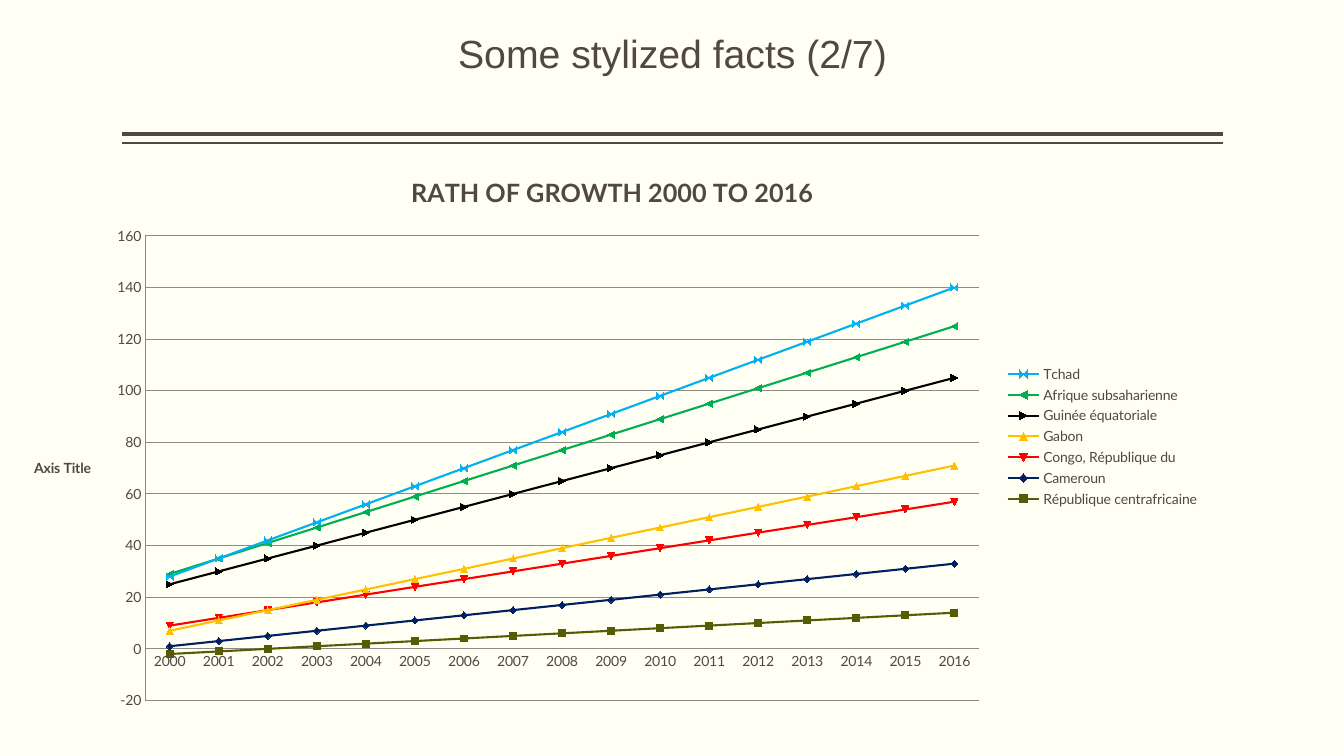
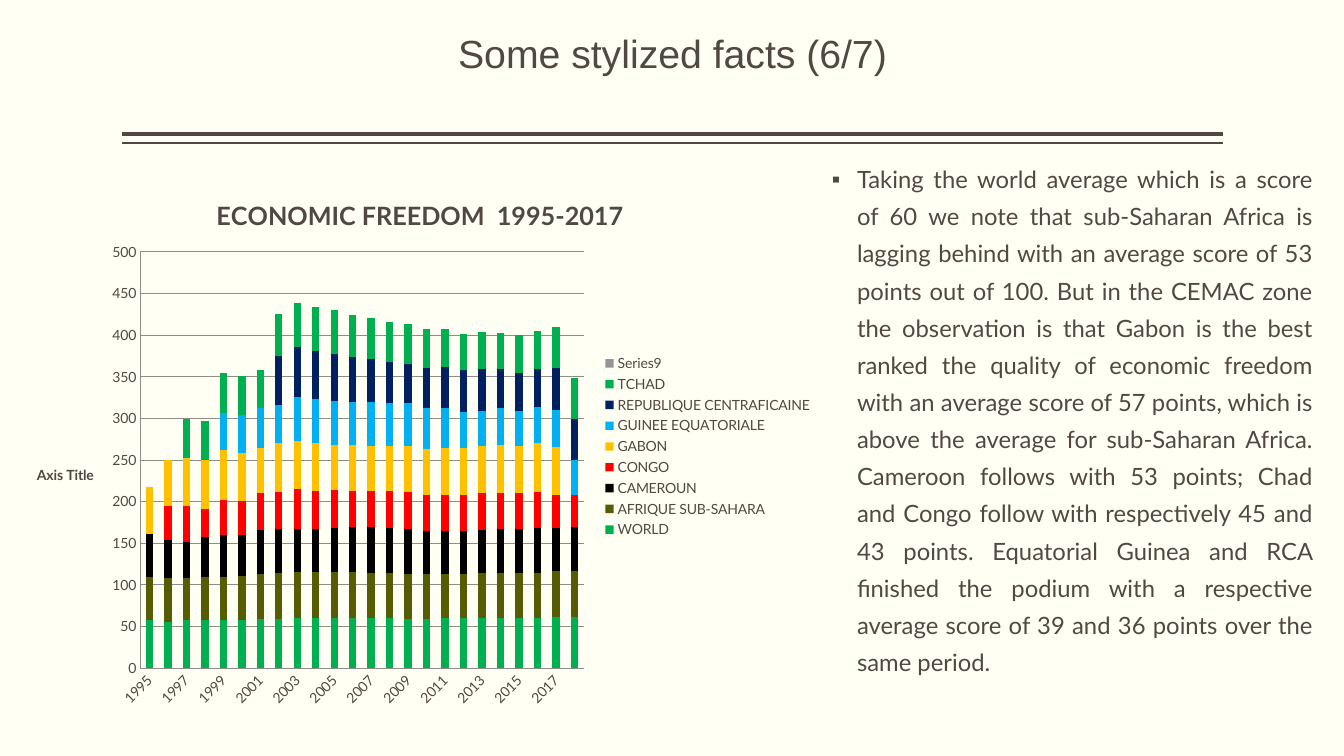
from lxml.etree import SubElement
from pptx import Presentation
from pptx.chart.data import CategoryChartData
from pptx.dml.color import RGBColor
from pptx.enum.chart import XL_CHART_TYPE, XL_LEGEND_POSITION, XL_TICK_MARK
from pptx.enum.shapes import MSO_CONNECTOR
from pptx.enum.text import MSO_ANCHOR, MSO_AUTO_SIZE, PP_ALIGN
from pptx.oxml import parse_xml
from pptx.oxml.ns import nsdecls, qn
from pptx.util import Inches, Pt

INK = "514843"
PAPER = "FFFFF3"
GRID = "8E8C86"
OLIVE, NAVY, RED, GOLD = "565C04", "002060", "FF0000", "FFC000"
BLACK, GREEN, SKY, GRAY = "000000", "00B050", "00B0F0", "939598"

TITLE_FONT = {"name": "Arial", "size": Pt(28), "bold": False}
BODY_FONT = {"name": "Lato", "size": Pt(17)}
CHART_FONT = {"name": "Lato", "size": Pt(10), "bold": False}
AXIS_TITLE_FONT = {"name": "Lato", "size": Pt(10), "bold": True}
CHART_TITLE_FONT = {"name": "Lato", "size": Pt(18), "bold": True}

TITLE_BOX = (1.21, 0.08, 10.92, 1.2)
RULES = ((1.33, 3), (1.42, 1))

GROWTH_YEARS = range(2000, 2017)
GROWTH_STARTS = (
    ("République centrafricaine", OLIVE, -2),
    ("Cameroun", NAVY, 3),
    ("Congo, République du", RED, 8),
    ("Gabon", GOLD, -2),
    ("Guinée équatoriale", BLACK, 18),
    ("Afrique subsaharienne", GREEN, 4),
    ("Tchad", SKY, -1),
)
GROWTH_SERIES = [
    (name, color, range(start, start + len(GROWTH_YEARS)))
    for name, color, start in GROWTH_STARTS
]

FREEDOM_YEARS = range(1995, 2019)
FREEDOM_SERIES = (
    ("WORLD", GREEN, [58, 56, 58, 58, 58, 58, 59, 59, 60, 60, 60, 60,
                      60, 60, 59, 59, 60, 60, 60, 60, 60, 60, 61, 61]),
    ("AFRIQUE SUB-SAHARA", OLIVE, [52, 52, 50, 51, 52, 53, 54, 55, 55, 55, 55, 55,
                                   54, 54, 54, 54, 53, 53, 54, 54, 54, 54, 56, 56]),
    ("CAMEROUN", BLACK, [51, 46, 44, 48, 50, 49, 53, 53, 52, 52, 53, 54,
                         55, 54, 54, 52, 52, 52, 52, 53, 53, 54, 51, 52]),
    ("CONGO", RED, [0, 41, 43, 34, 42, 41, 44, 45, 48, 46, 46, 44,
                    44, 45, 45, 43, 43, 43, 44, 43, 43, 44, 40, 39]),
    ("GABON", GOLD, [57, 55, 58, 59, 60, 58, 55, 58, 58, 58, 54, 55,
                     54, 54, 55, 55, 56, 56, 57, 58, 57, 58, 58, None]),
    ("GUINEE EQUATORIALE", SKY, [0, 0, 0, 0, 45, 45, 47, 46, 53, 52, 53, 52,
                                 53, 52, 51, 49, 49, 44, 42, 44, 42, 44, 44, 42]),
    ("REPUBLIQUE CENTRAFICAINE", NAVY, [0, 0, 0, 0, 0, 0, 0, 59, 60, 58, 57, 54,
                                        51, 49, 48, 48, 49, 50, 50, 47, 46, 45, 51, 49]),
    ("TCHAD", GREEN, [0, 0, 46, 47, 48, 47, 46, 50, 53, 53, 52, 50,
                      50, 48, 48, 47, 45, 44, 45, 44, 45, 46, 49, 49]),
    ("Series9", GRAY, [None] * len(FREEDOM_YEARS)),
)
FREEDOM_TEXT = (
    "Taking the world average which is a score of 60 we note that sub-Saharan Africa is "
    "lagging behind with an average score of 53 points out of 100. But in the CEMAC zone "
    "the observation is that Gabon is the best ranked the quality of economic freedom with "
    "an average score of 57 points, which is above the average for sub-Saharan Africa. "
    "Cameroon follows with 53 points; Chad and Congo follow with respectively 45 and 43 "
    "points. Equatorial Guinea and RCA finished the podium with a respective average score "
    "of 39 and 36 points over the same period."
)


def rgb(value):
    """Turn a hex string into a colour."""
    return RGBColor.from_string(value)


def set_values(target, values):
    """Set each attribute of the target from a dict."""
    for name, value in values.items():
        setattr(target, name, value)


def style_font(font, values):
    """Apply font values in the ink colour."""
    set_values(font, values)
    font.color.rgb = rgb(INK)


def paint_fill(fill, color):
    """Give a solid fill its colour."""
    fill.solid()
    fill.fore_color.rgb = rgb(color)


def paint_line(line, color, width):
    """Give a line its colour and its width in points."""
    line.color.rgb = rgb(color)
    line.width = Pt(width)


def fill_placeholder(holder, box, text, font, frame_values, para_values):
    """Place a placeholder in the box and write its one paragraph."""
    sides = ("left", "top", "width", "height")
    set_values(holder, dict(zip(sides, map(Inches, box))))
    frame = holder.text_frame
    set_values(frame, {"word_wrap": True, "auto_size": MSO_AUTO_SIZE.NONE,
                       "margin_left": 0, "margin_right": 0,
                       "margin_top": Inches(0.05), **frame_values})
    para = frame.paragraphs[0]
    set_values(para, para_values)
    span = para.add_run()
    span.text = text
    style_font(span.font, font)
    return para


def add_page(deck, layout_index, title):
    """Add a slide with its title and the double rule below it."""
    page = deck.slides.add_slide(deck.slide_layouts[layout_index])
    left, _, width, _ = TITLE_BOX
    for top, weight in RULES:
        rule = page.shapes.add_connector(
            MSO_CONNECTOR.STRAIGHT, Inches(left), Inches(top),
            Inches(left + width), Inches(top))
        paint_line(rule.line, INK, weight)
        SubElement(rule.element.spPr, qn("a:effectLst"))
    fill_placeholder(
        page.shapes.title, TITLE_BOX, title, TITLE_FONT,
        {"vertical_anchor": MSO_ANCHOR.BOTTOM, "margin_bottom": Inches(0.52)},
        {"alignment": PP_ALIGN.CENTER, "line_spacing": 0.9})
    return page


def add_bullet(page, box, text):
    """Write the justified bullet paragraph in the body placeholder."""
    para = fill_placeholder(
        page.placeholders[1], box, text, BODY_FONT,
        {"vertical_anchor": MSO_ANCHOR.TOP, "margin_bottom": Inches(0.05)},
        {"alignment": PP_ALIGN.JUSTIFY, "line_spacing": 1.3, "space_before": Pt(18)})
    properties = para._p.get_or_add_pPr()
    properties.set("marL", str(Inches(0.25)))
    properties.set("indent", str(Inches(-0.25)))
    SubElement(properties, qn("a:buChar")).set("char", "▪")


def set_plot_area(chart, box, plot_box):
    """Fix the inner plot area, given in slide inches, within the chart box."""
    left, top, width, height = box
    plot_left, plot_top, plot_width, plot_height = plot_box
    fractions = ((plot_left - left) / width, (plot_top - top) / height,
                 plot_width / width, plot_height / height)
    area = chart.element.find(".//" + qn("c:plotArea"))
    for layout in area.findall(qn("c:layout")):
        area.remove(layout)
    places = "".join(f'<c:{side} val="{value}"/>' for side, value in zip("xywh", fractions))
    area.insert(0, parse_xml(
        f'<c:layout {nsdecls("c")}><c:manualLayout><c:layoutTarget val="inner"/>'
        f'<c:xMode val="edge"/><c:yMode val="edge"/>{places}'
        "</c:manualLayout></c:layout>"))


def write_chart_title(holder, text, font):
    """Write the text of a chart title or an axis title."""
    span = holder.text_frame.paragraphs[0].add_run()
    span.text = text
    style_font(span.font, font)


def turn_text(chart, part, degrees):
    """Rotate the text of one part of a chart axis."""
    for body in chart.element.xpath(f".//{part}//a:bodyPr"):
        body.set("rot", str(degrees * 60000))
        body.set("vert", "horz")


def add_stacked_chart(page, box, plot_box, kind, title, years, series_rows, scale):
    """Add a stacked chart with title, axes, grid and legend."""
    data = CategoryChartData()
    data.categories = [str(year) for year in years]
    for name, _, values in series_rows:
        data.add_series(name, values)
    chart = page.shapes.add_chart(kind, *map(Inches, box), data).chart
    style_font(chart.font, CHART_FONT)
    write_chart_title(chart.chart_title, title, CHART_TITLE_FONT)
    chart.chart_title.include_text_in_layout = False
    chart.has_legend = True
    set_values(chart.legend, {"position": XL_LEGEND_POSITION.RIGHT,
                              "include_in_layout": False})
    style_font(chart.legend.font, CHART_FONT)
    for axis in (chart.category_axis, chart.value_axis):
        set_values(axis, {"major_tick_mark": XL_TICK_MARK.NONE,
                          "minor_tick_mark": XL_TICK_MARK.NONE})
        paint_line(axis.format.line, GRID, 0.75)
        style_font(axis.tick_labels.font, CHART_FONT)
    value_axis = chart.value_axis
    set_values(value_axis, {"has_major_gridlines": True, **scale})
    paint_line(value_axis.major_gridlines.format.line, GRID, 0.75)
    write_chart_title(value_axis.axis_title, "Axis Title", AXIS_TITLE_FONT)
    turn_text(chart, "c:valAx/c:title", 0)
    set_plot_area(chart, box, plot_box)
    return chart


def build_growth_page(deck):
    """Build the slide with the growth line chart."""
    page = add_page(deck, 5, "Some stylized facts (2/7)")
    chart = add_stacked_chart(
        page, (0.14, 1.52, 11.86, 5.62), (1.44, 2.34, 8.27, 4.61),
        XL_CHART_TYPE.LINE_MARKERS_STACKED,
        "RATH OF GROWTH 2000 TO 2016", GROWTH_YEARS, GROWTH_SERIES,
        {"minimum_scale": -20, "maximum_scale": 160, "major_unit": 20})
    for series, (_, color, _) in zip(chart.plots[0].series, GROWTH_SERIES):
        series.smooth = False
        paint_line(series.format.line, color, 1.5)
        series.marker.size = 5
        paint_fill(series.marker.format.fill, color)
        paint_line(series.marker.format.line, color, 0.75)


def build_freedom_page(deck):
    """Build the slide with the freedom column chart and its comment."""
    page = add_page(deck, 1, "Some stylized facts (6/7)")
    add_bullet(page, (8.25, 1.5, 4.77, 5.76), FREEDOM_TEXT)
    chart = add_stacked_chart(
        page, (0.17, 1.75, 7.99, 5.36), (1.39, 2.5, 4.4, 4.13),
        XL_CHART_TYPE.COLUMN_STACKED,
        "ECONOMIC FREEDOM  1995-2017", FREEDOM_YEARS, FREEDOM_SERIES,
        {"minimum_scale": 0, "maximum_scale": 500, "major_unit": 50})
    turn_text(chart, "c:catAx/c:txPr", -45)
    plot = chart.plots[0]
    set_values(plot, {"gap_width": 150, "overlap": 100, "vary_by_categories": False})
    for series, (_, color, _) in zip(plot.series, FREEDOM_SERIES):
        paint_fill(series.format.fill, color)


def main():
    """Build and save the deck."""
    deck = Presentation()
    set_values(deck, {"slide_width": Inches(13.33), "slide_height": Inches(7.5)})
    paint_fill(deck.slide_master.background.fill, PAPER)
    build_growth_page(deck)
    build_freedom_page(deck)
    deck.save("out.pptx")


if __name__ == "__main__":
    main()
